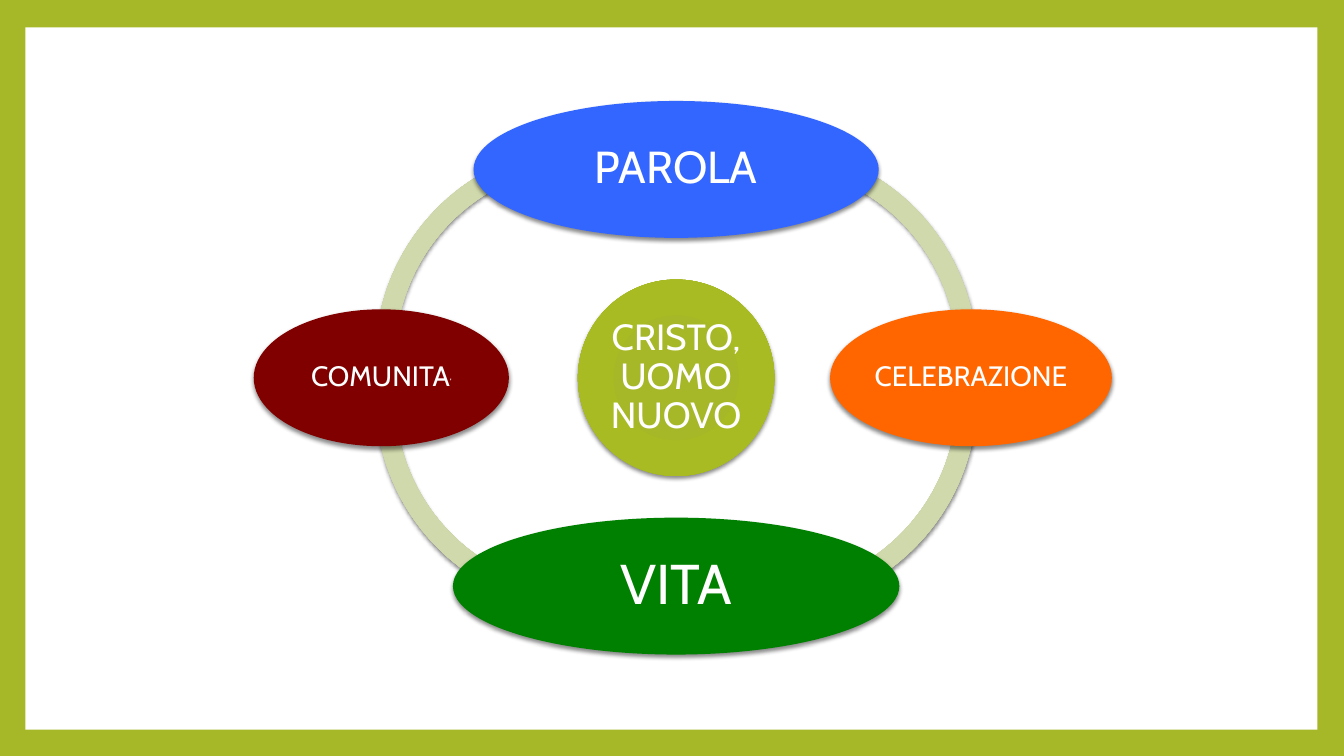
from dataclasses import dataclass

import pptx
import pptx.dml.color
import pptx.enum.shapes
import pptx.enum.text
import pptx.oxml
import pptx.oxml.ns
import pptx.util

Cm = pptx.util.Cm
Pt = pptx.util.Pt
Shape = pptx.enum.shapes.MSO_SHAPE


@dataclass(frozen=True)
class Theme:
    font: str = "Cabin"
    lime: str = "A6B727"
    white: str = "FFFFFF"
    blue: str = "3366FF"
    orange: str = "FF6600"
    green: str = "008000"
    maroon: str = "800000"
    ring: tuple = ("D0D8AD", "D0D9AC", "BFC899")
    core: tuple = ("A6B727", "A9BB23", "A1B316")
    tiny: int = 7
    small: int = 20
    medium: int = 26
    large: int = 32
    huge: int = 40


class Deck:
    def __init__(self, prs, theme):
        self.theme = theme
        self.s = prs.slides.add_slide(prs.slide_layouts[6])

    def rgb(self, color):
        return pptx.dml.color.RGBColor.from_string(color)

    def background(self, color):
        fill = self.s.background.fill
        fill.solid()
        fill.fore_color.rgb = self.rgb(color)

    def shape(self, kind, cx, cy, width, height, color):
        sp = self.s.shapes.add_shape(
            kind, Cm(cx - width / 2), Cm(cy - height / 2), Cm(width), Cm(height))
        sp.fill.solid()
        sp.line.fill.background()
        sp.shadow.inherit = False
        if isinstance(color, tuple):
            self.radial(sp, color)
        else:
            sp.fill.fore_color.rgb = self.rgb(color)
        return sp

    def radial(self, sp, colors):
        stops = "".join(
            f'<a:gs pos="{pos}"><a:srgbClr val="{color}"/></a:gs>'
            for pos, color in zip((0, 90000, 100000), colors))
        grad = pptx.oxml.parse_xml(
            f'<a:gradFill {pptx.oxml.ns.nsdecls("a")}><a:gsLst>{stops}</a:gsLst>'
            '<a:path path="circle"><a:fillToRect l="100000" t="100000" '
            'r="100000" b="100000"/></a:path></a:gradFill>')
        props = sp.element.spPr
        props.replace(props.find(pptx.oxml.ns.qn("a:solidFill")), grad)

    def shadow(self, sp):
        effects = sp.element.spPr.find(pptx.oxml.ns.qn("a:effectLst"))
        effects.append(pptx.oxml.parse_xml(
            f'<a:outerShdw {pptx.oxml.ns.nsdecls("a")} blurRad="{Pt(3)}" '
            f'dist="{Pt(2)}" dir="5400000" algn="ctr" rotWithShape="0">'
            '<a:srgbClr val="000000"><a:alpha val="45000"/></a:srgbClr>'
            '</a:outerShdw>'))

    def arc(self, cx, cy, size, start, end, thickness):
        sp = self.shape(Shape.BLOCK_ARC, cx, cy, size, size, self.theme.ring)
        sp.adjustments[0] = start
        sp.adjustments[1] = end
        sp.adjustments[2] = thickness
        self.shadow(sp)

    def ellipse(self, cx, cy, width, height, color, runs):
        sp = self.shape(Shape.OVAL, cx, cy, width, height, color)
        self.shadow(sp)
        tf = sp.text_frame
        tf.word_wrap = True
        tf.vertical_anchor = pptx.enum.text.MSO_ANCHOR.MIDDLE
        tf.margin_left = tf.margin_right = Cm(0.05)
        tf.margin_top = tf.margin_bottom = Cm(0.05)
        p = tf.paragraphs[0]
        p.alignment = pptx.enum.text.PP_ALIGN.CENTER
        p.line_spacing = 0.9
        for text, size in runs:
            r = p.add_run()
            r.text = text
            r.font.name = self.theme.font
            r.font.size = Pt(size)
            r.font.color.rgb = self.rgb(self.theme.white)


def main():
    prs = pptx.Presentation()
    prs.slide_width, prs.slide_height = Cm(33.87), Cm(19.05)
    theme = Theme()
    deck = Deck(prs, theme)
    deck.background(theme.lime)
    deck.shape(Shape.RECTANGLE, 16.92, 9.54, 32.56, 17.7, theme.white)

    cx, cy = 17.04, 9.52
    for side, level, start, end in (
        (-1, -1, 104.72, 177.13),
        (-1, 1, 38.87, 111.28),
        (1, 1, 212.91, 68.68),
        (1, -1, 147.32, 3.09),
    ):
        deck.arc(cx + side * 2.21, cy + level * 0.49, 10.74, start, end, 0.046)

    deck.ellipse(cx, cy, 4.95, 4.95, theme.core,
                 [("CRISTO, UOMO NUOVO", theme.medium)])
    for dx, dy, width, color, runs in (
        (0, -1, 10.21, theme.blue, [("PAROLA", theme.large)]),
        (1, 0, 7.1, theme.orange, [("CELEBRAZIONE", theme.small)]),
        (0, 1, 11.25, theme.green, [("VITA", theme.huge)]),
        (-1, 0, 6.43, theme.maroon,
         [("COMUNITA", theme.small), ("’", theme.tiny)]),
    ):
        deck.ellipse(cx + dx * 7.43, cy + dy * 5.25, width, 3.45, color, runs)

    prs.save("out.pptx")


if __name__ == "__main__":
    main()
